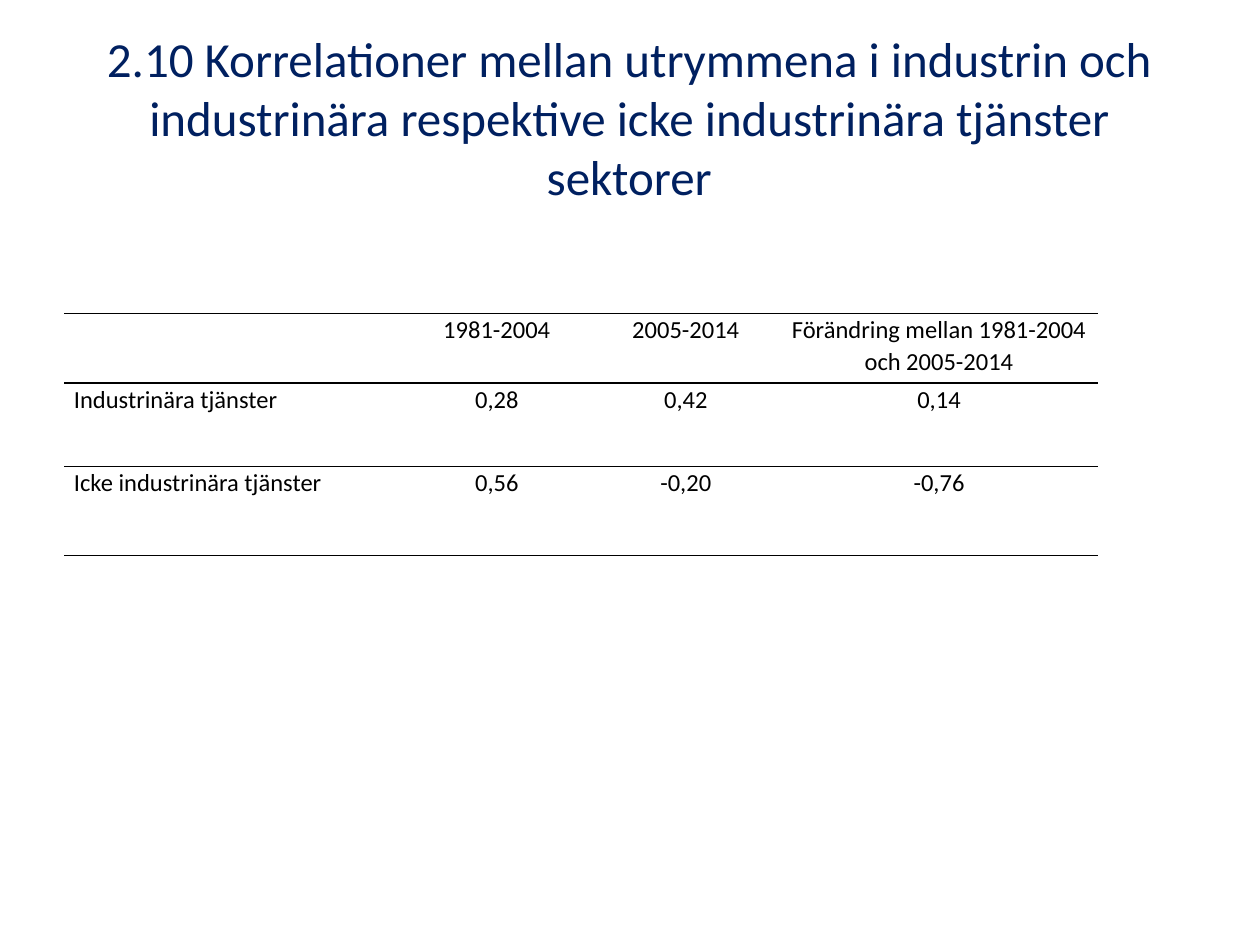
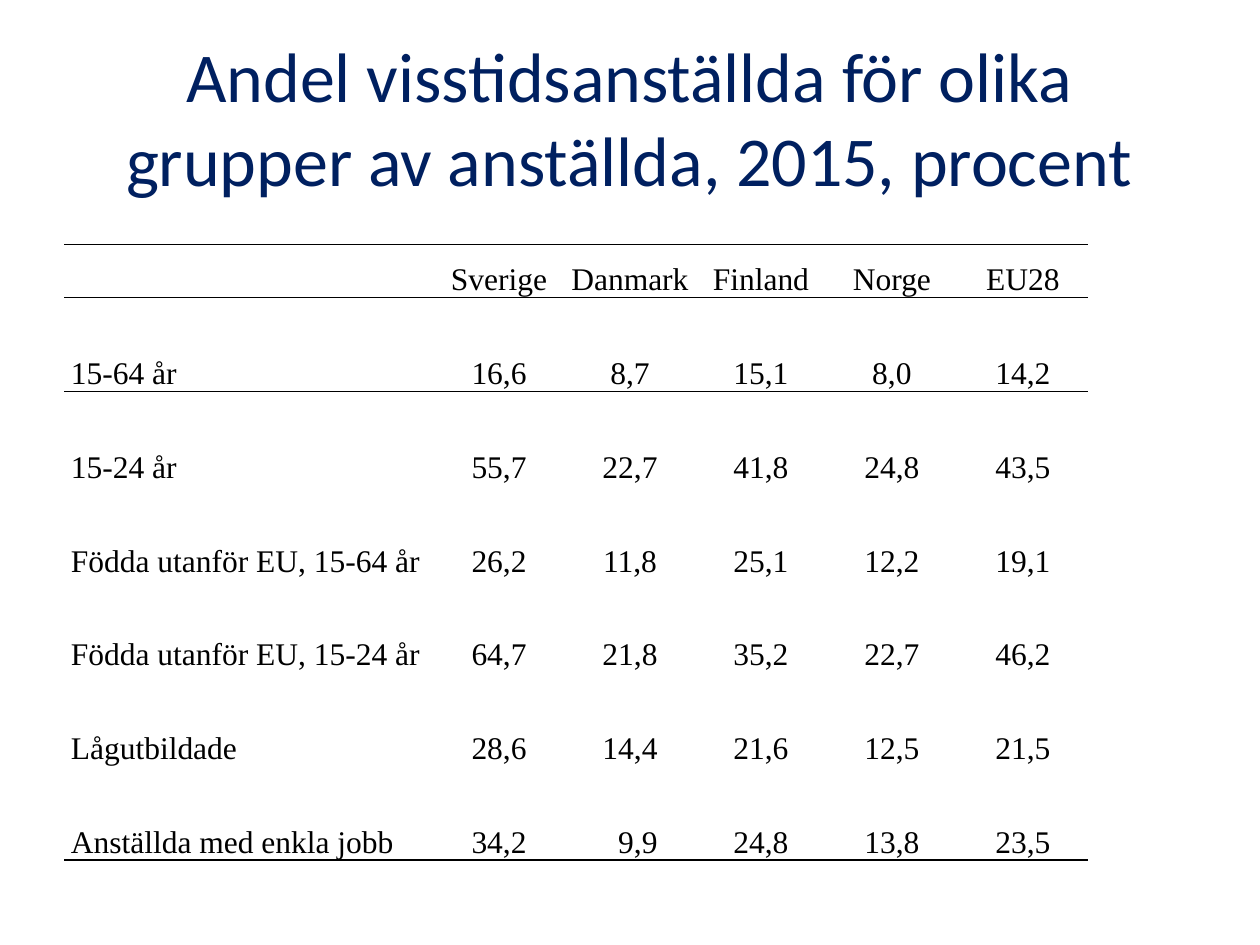
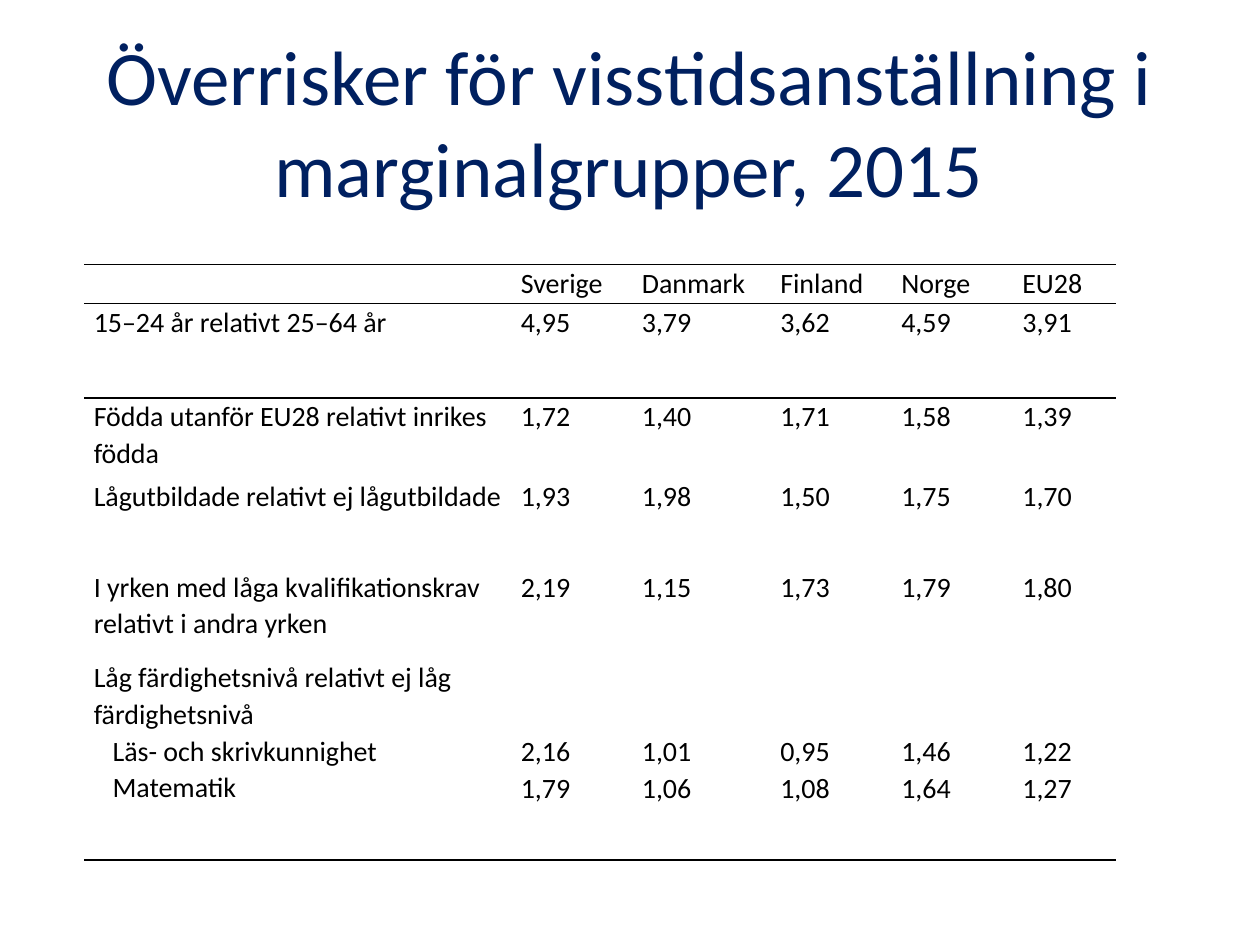
from lxml import etree
from pptx import Presentation
from pptx import util as u
from pptx.dml.color import RGBColor
from pptx.enum import text
from pptx.oxml import ns

HUES = {"title": "002060", "ink": "000000"}
PLAIN = "{2D5ABB26-0587-4C30-8999-92F81FD0307C}"  # table style without grid
LANDS = ["Sverige", "Danmark", "Finland", "Norge", "EU28"]
LEFT, MID = text.PP_ALIGN.LEFT, text.PP_ALIGN.CENTER
TOP, LOW = text.MSO_ANCHOR.TOP, text.MSO_ANCHOR.BOTTOM
HEAD = (1.27, 0.76, 22.83, 3.18)


def style(par, font, size, hue, align):
    par.font.name = font
    par.font.size = u.Pt(size)
    par.font.color.rgb = RGBColor.from_string(HUES[hue])
    par.alignment = align


def page(deck, words, size, box=HEAD):
    """Add a slide with its title set in the given box."""
    slide = deck.slides.add_slide(deck.slide_layouts[5])
    title = slide.shapes.title
    title.left, title.top, title.width, title.height = map(u.Cm, box)
    frame = title.text_frame
    frame.text = words
    frame.word_wrap = True
    frame.auto_size = text.MSO_AUTO_SIZE.NONE
    frame.vertical_anchor = text.MSO_ANCHOR.MIDDLE
    style(frame.paragraphs[0], "Calibri", size, "title", MID)
    return slide


def rule(cell, side):
    """Draw a thin line along one side of a cell."""
    line = etree.SubElement(cell._tc.get_or_add_tcPr(), ns.qn("a:" + side), w="12700")
    fill = etree.SubElement(line, ns.qn("a:solidFill"))
    etree.SubElement(fill, ns.qn("a:srgbClr"), val=HUES["ink"])


def sheet(slide, spot, cols, highs, rows, size, font="Calibri",
          align=LEFT, anchor=TOP, pad=0.19):
    """Add a table ruled above and below its head and at its foot."""
    left, top = spot
    table = slide.shapes.add_table(
        len(rows), len(cols), u.Cm(left), u.Cm(top),
        u.Cm(sum(cols)), u.Cm(sum(highs))).table
    table.first_row = table.horz_banding = False
    table._tbl.tblPr.find(ns.qn("a:tableStyleId")).text = PLAIN
    for col, wide in zip(table.columns, cols):
        col.width = u.Cm(wide)
    for row, high in zip(table.rows, highs):
        row.height = u.Cm(high)
    for r, row in enumerate(rows):
        for c, words in enumerate(row):
            cell = table.cell(r, c)
            cell.text = words
            cell.margin_left = cell.margin_right = u.Cm(pad)
            cell.margin_top = cell.margin_bottom = 0
            cell.vertical_anchor = anchor
            for par in cell.text_frame.paragraphs:
                style(par, font, size, "ink", align if c else LEFT)
                if words:
                    par.line_spacing = 1.07
            if r < 2:
                rule(cell, "lnT")
            if r in (0, len(rows) - 1):
                rule(cell, "lnB")
            cell.fill.background()
    return table


def links(deck):
    slide = page(deck, "2.10 Korrelationer mellan utrymmena i industrin och "
                 "industrinära respektive icke industrinära tjänster sektorer", 28)
    rows = [
        ["", "1981-2004", "2005-2014", "Förändring mellan 1981-2004 och 2005-2014"],
        ["Industrinära tjänster", "0,28", "0,42", "0,14"],
        ["Icke industrinära tjänster", "0,56", "-0,20", "-0,76"],
    ]
    sheet(slide, (1.3, 6.32), [6.81, 3.81, 3.81, 6.4], [1.4, 1.68, 1.8],
          rows, 14, align=MID)


def shares(deck):
    slide = page(deck, "Andel visstidsanställda för olika grupper av "
                 "anställda, 2015, procent", 40)
    rows = [
        ["", *LANDS],
        ["15-64 år", "16,6", "8,7", "15,1", "8,0", "14,2"],
        ["15-24 år", "55,7", "22,7", "41,8", "24,8", "43,5"],
        ["Födda utanför EU, 15-64 år", "26,2", "11,8", "25,1", "12,2", "19,1"],
        ["Födda utanför EU, 15-24 år", "64,7", "21,8", "35,2", "22,7", "46,2"],
        ["Lågutbildade", "28,6", "14,4", "21,6", "12,5", "21,5"],
        ["Anställda med enkla jobb", "34,2", "9,9", "24,8", "13,8", "23,5"],
    ]
    table = sheet(slide, (1.3, 4.93), [7.44] + [2.64] * 5, [1.07] + [1.89] * 6,
                  rows, 18, "Times New Roman", MID, LOW, 0.13)
    # Line up the decimals of the last row in the Danish column
    table.cell(6, 2).margin_left = u.Cm(0.45)


def risks(deck):
    slide = page(deck, "Överrisker för visstidsanställning i marginalgrupper, 2015",
                 44, (1.27, 0.53, 22.83, 3.81))
    rows = [
        ["", *LANDS],
        ["15–24 år relativt 25–64 år", "4,95", "3,79", "3,62", "4,59", "3,91"],
        ["Födda utanför EU28 relativt inrikes födda",
         "1,72", "1,40", "1,71", "1,58", "1,39"],
        ["Lågutbildade relativt ej lågutbildade",
         "1,93", "1,98", "1,50", "1,75", "1,70"],
        ["I yrken med låga kvalifikationskrav\nrelativt i andra yrken",
         "2,19", "1,15", "1,73", "1,79", "1,80"],
        ["Låg färdighetsnivå relativt ej låg färdighetsnivå\n"
         "Läs- och skrivkunnighet\nMatematik",
         "2,16\n1,79", "1,01\n1,06", "0,95\n1,08", "1,46\n1,64", "1,22\n1,27"],
    ]
    table = sheet(slide, (1.7, 5.33), [8.61, 2.44, 2.79, 2.44, 2.44, 2.08],
                  [0.79, 1.9, 1.6, 1.83, 1.83, 4.06], rows, 16)
    # Indent the two skills and set their values level with them
    for par in table.cell(5, 0).text_frame.paragraphs[1:]:
        par._p.get_or_add_pPr().set("marL", str(u.Cm(0.38)))
    for c in range(1, 6):
        table.cell(5, c).margin_top = u.Cm(1.49)


def main():
    deck = Presentation()
    deck.slide_width, deck.slide_height = u.Cm(25.4), u.Cm(19.05)
    for build in (links, shares, risks):
        build(deck)
    deck.save("out.pptx")


if __name__ == "__main__":
    main()
